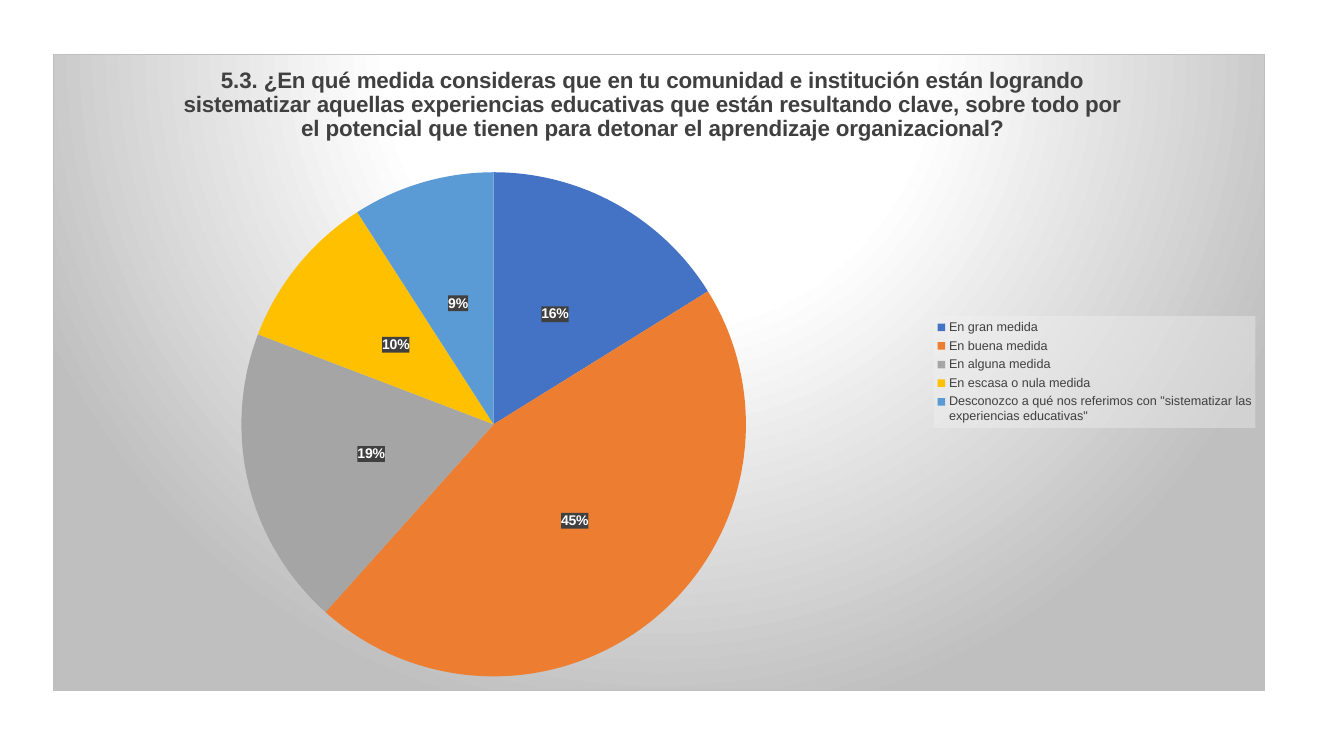
import pptx
import pptx.chart.data
import pptx.dml.color
import pptx.enum.chart
import pptx.oxml
import pptx.oxml.ns
import pptx.util
from collections import namedtuple

EMU_PER_PX = 914400 / 100.8
SLIDE_WIDTH, SLIDE_HEIGHT = 1344, 756

Box = namedtuple("Box", "left top width height")

THEME = {
    "font": "Arial",
    "text": "404040",
    "label": "FFFFFF",
    "panel_light": "FFFFFF",
    "panel_dark": "BFBFBF",
    "legend_fill": "F2F2F2",
    "slices": ["4472C4", "ED7D31", "A5A5A5", "FFC000", "5B9BD5"],
    "title_size": 16,
    "label_size": 10,
    "legend_size": 9,
}

QUESTION = (
    "5.3. ¿En qué medida consideras que en tu comunidad e institución están "
    "logrando sistematizar aquellas experiencias educativas que están resultando "
    "clave, sobre todo por el potencial que tienen para detonar el aprendizaje "
    "organizacional?"
)
ANSWERS = {
    "En gran medida": 16,
    "En buena medida": 45,
    "En alguna medida": 19,
    "En escasa o nula medida": 10,
    'Desconozco a qué nos referimos con "sistematizar las experiencias educativas"': 9,
}


def px(length):
    return pptx.util.Emu(round(length * EMU_PER_PX))


def rgb(color):
    return pptx.dml.color.RGBColor.from_string(color)


def set_formats(target, formats):
    for attribute, value in formats.items():
        setattr(target, attribute, value)


def format_font(font, size, color, bold=False):
    set_formats(font, {
        "name": THEME["font"],
        "size": pptx.util.Pt(THEME[size]),
        "bold": bold,
    })
    font.color.rgb = rgb(THEME[color])


def chart_xml(tag, content):
    namespaces = pptx.oxml.ns.nsdecls("c", "a")
    return pptx.oxml.parse_xml(f"<c:{tag} {namespaces}>{content}</c:{tag}>")


def child(parent, tag):
    return parent.find(pptx.oxml.ns.qn(f"c:{tag}"))


def descendant(chart, tag):
    return chart.element.find(".//" + pptx.oxml.ns.qn(f"c:{tag}"))


def add_shape_format(parent, content):
    """Give a chart region its fill and border, ahead of its text format."""
    child(parent, "txPr").addprevious(chart_xml("spPr", content))


def solid_fill(color, opacity):
    return (
        f'<a:solidFill><a:srgbClr val="{color}">'
        f'<a:alpha val="{opacity * 1000}"/></a:srgbClr></a:solidFill>'
    )


def place(region, panel, box, target=""):
    """Lay out a region by a box in px from the panel's corner; no width means automatic size."""
    shares = {"x": box.left / panel.width, "y": box.top / panel.height}
    if box.width:
        shares.update(w=box.width / panel.width, h=box.height / panel.height)
    modes = '<c:xMode val="edge"/><c:yMode val="edge"/>'
    values = "".join(f'<c:{key} val="{share:.4f}"/>' for key, share in shares.items())
    layout = chart_xml("layout", f"<c:manualLayout>{target}{modes}{values}</c:manualLayout>")

    previous = child(region, "layout")
    if previous is not None:
        region.remove(previous)
    overlay = child(region, "overlay")
    if overlay is None:
        region.insert(0, layout)
    else:
        overlay.addprevious(layout)


def format_panel(chart):
    format_font(chart.font, "label_size", "text")
    light, dark = THEME["panel_light"], THEME["panel_dark"]
    stops = "".join(
        f'<a:gs pos="{position * 1000}"><a:srgbClr val="{color}"/></a:gs>'
        for position, color in [(0, light), (39, light), (100, dark)]
    )
    add_shape_format(
        chart.element,
        f'<a:gradFill><a:gsLst>{stops}</a:gsLst><a:path path="circle">'
        '<a:fillToRect l="50000" t="-80000" r="50000" b="180000"/></a:path></a:gradFill>'
        f'<a:ln w="9525">{solid_fill(dark, 100)}</a:ln>',
    )


def add_question(chart, panel):
    chart.has_title = True
    chart.chart_title.include_in_layout = False
    question = chart.chart_title.text_frame
    question.text = QUESTION
    format_font(question.paragraphs[0].runs[0].font, "title_size", "text", bold=True)
    place(descendant(chart, "title"), panel, Box(126, 7, 0, 0))


def format_pie(chart, panel):
    pie = chart.plots[0]
    pie.vary_by_categories = True
    answers = pie.series[0]
    for index, color in enumerate(THEME["slices"]):
        fill = answers.points[index].format.fill
        fill.solid()
        fill.fore_color.rgb = rgb(color)

    percentages = answers.data_labels
    set_formats(percentages, {
        "show_percentage": True,
        "show_value": False,
        "show_legend_key": False,
        "number_format": "0%",
        "number_format_is_linked": False,
        "position": pptx.enum.chart.XL_LABEL_POSITION.CENTER,
    })
    format_font(percentages.font, "label_size", "label", bold=True)
    add_shape_format(descendant(chart, "dLbls"), solid_fill(THEME["text"], 90))
    place(descendant(chart, "plotArea"), panel, Box(188, 118, 505, 505),
          '<c:layoutTarget val="inner"/>')


def add_legend(chart, panel):
    chart.has_legend = True
    set_formats(chart.legend, {
        "position": pptx.enum.chart.XL_LEGEND_POSITION.RIGHT,
        "include_in_layout": False,
    })
    format_font(chart.legend.font, "legend_size", "text")
    legend = descendant(chart, "legend")
    place(legend, panel, Box(881, 262, 322, 112))
    add_shape_format(legend, solid_fill(THEME["legend_fill"], 39))


def add_survey_chart(slide, panel):
    answers = pptx.chart.data.CategoryChartData()
    answers.categories = list(ANSWERS)
    answers.add_series("Series 1", list(ANSWERS.values()))
    chart = slide.shapes.add_chart(
        pptx.enum.chart.XL_CHART_TYPE.PIE, *map(px, panel), answers
    ).chart
    format_panel(chart)
    add_question(chart, panel)
    format_pie(chart, panel)
    add_legend(chart, panel)


def main():
    presentation = pptx.Presentation()
    presentation.slide_width = px(SLIDE_WIDTH)
    presentation.slide_height = px(SLIDE_HEIGHT)
    slide = presentation.slides.add_slide(presentation.slide_layouts[6])
    add_survey_chart(slide, Box(53, 54, 1212, 637))
    presentation.save("out.pptx")


if __name__ == "__main__":
    main()
